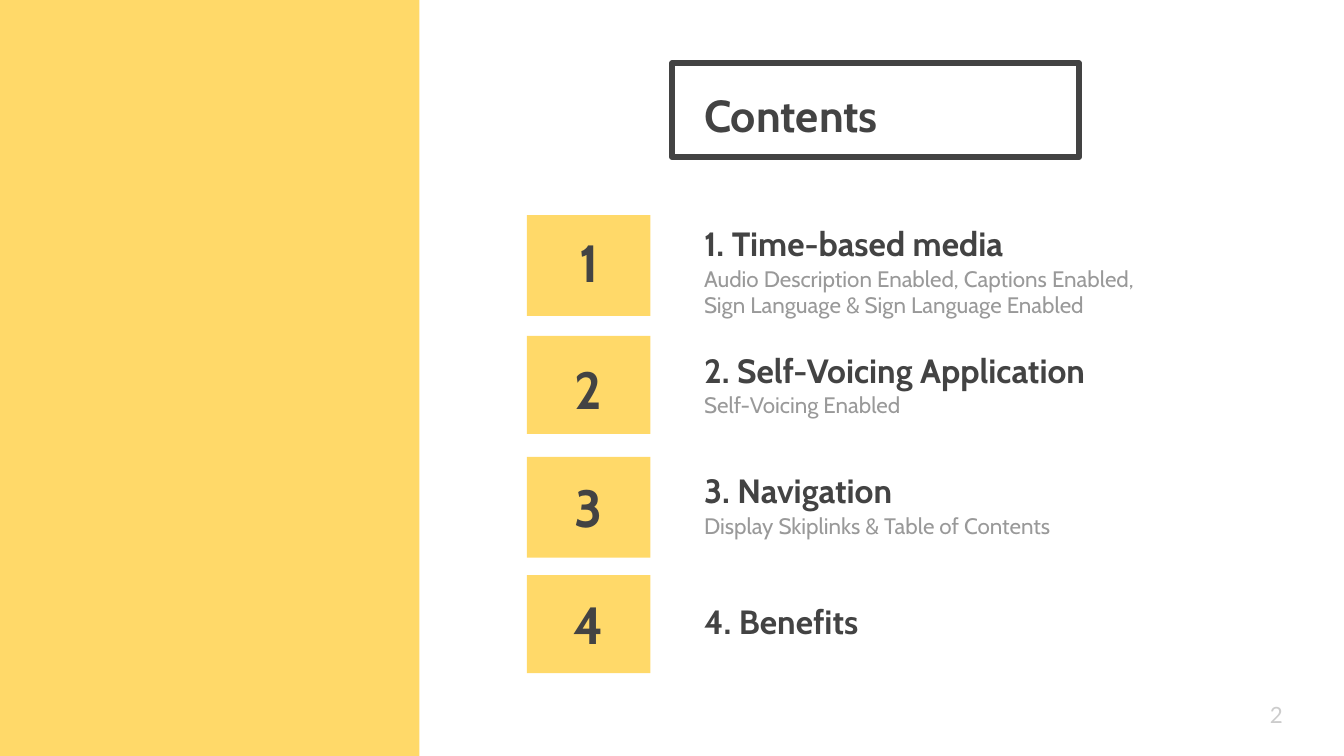
from pptx import Presentation
from pptx.dml.color import RGBColor
from pptx.enum.shapes import MSO_SHAPE
from pptx.enum.text import MSO_ANCHOR, PP_ALIGN
from pptx.util import Inches, Pt

RECT = MSO_SHAPE.RECTANGLE
TOP, MIDDLE, BOTTOM = MSO_ANCHOR.TOP, MSO_ANCHOR.MIDDLE, MSO_ANCHOR.BOTTOM
LEFT, CENTER = PP_ALIGN.LEFT, PP_ALIGN.CENTER

YELLOW = RGBColor(0xFF, 0xD9, 0x69)
DARK = RGBColor(0x43, 0x43, 0x43)
GRAY = RGBColor(0x99, 0x99, 0x99)
LIGHT = RGBColor(0xCC, 0xCC, 0xCC)

SLIDE_W = 10
SLIDE_H = SLIDE_W * 9 / 16
TEXT_X = 5.14
TITLE_W = 5.81

# Tile top, tile height, number top, heading top, heading, description
SECTIONS = [
    (1.6, 0.75, 1.6, 1.31, "1. Time-based media",
     "Audio Description Enabled, Captions Enabled, "
     "Sign Language & Sign Language Enabled"),
    (2.5, 0.73, 2.54, 2.25, "2. Self-Voicing Application",
     "Self-Voicing Enabled"),
    (3.4, 0.75, 3.42, 3.15, "3. Navigation",
     "Display Skiplinks & Table of Contents"),
    (4.28, 0.73, 4.29, 4.12, "4. Benefits", None),
]


def write(tf, text, size=12, color=DARK, bold=False, font="Cabin",
          align=LEFT, spacing=None):
    p = tf.paragraphs[0]
    p.alignment = align
    if spacing:
        p.line_spacing = spacing
    r = p.add_run()
    r.text = text
    r.font.name = font
    r.font.size = Pt(size)
    r.font.bold = bold
    r.font.color.rgb = color


class Deck:
    """Holds the box style and the current slide."""

    inset = Inches(0.1)

    def __init__(self, slide):
        self.slide = slide

    def rect(self, x, y, w, h, fill=None, line=None, width=3):
        sp = self.slide.shapes.add_shape(
            RECT, Inches(x), Inches(y), Inches(w), Inches(h))
        sp.shadow.inherit = False
        if fill is None:
            sp.fill.background()
        else:
            sp.fill.solid()
            sp.fill.fore_color.rgb = fill
        if line is None:
            sp.line.fill.background()
        else:
            sp.line.color.rgb = line
            sp.line.width = Pt(width)

    def text(self, x, y, w, h, text, anchor=MIDDLE, **style):
        sp = self.slide.shapes.add_textbox(
            Inches(x), Inches(y), Inches(w), Inches(h))
        tf = sp.text_frame
        tf.word_wrap = True
        tf.vertical_anchor = anchor
        tf.margin_left = tf.margin_right = self.inset
        tf.margin_top = tf.margin_bottom = self.inset
        write(tf, text, **style)


def main():
    prs = Presentation()
    prs.slide_width, prs.slide_height = Inches(SLIDE_W), Inches(SLIDE_H)
    s = prs.slides.add_slide(prs.slide_layouts[6])
    deck = Deck(s)

    # Side panel and framed title
    deck.rect(5, 0.47, 3.03, 0.7, line=DARK)
    deck.rect(0, 0, 3.12, SLIDE_H, fill=YELLOW)
    deck.text(TEXT_X, 0.21, TITLE_W, 1.22, "Contents",
              size=24, bold=True, spacing=1.15)

    # Numbered sections
    for number, section in enumerate(SECTIONS, 1):
        tile_y, tile_h, number_y, heading_y, heading, description = section
        deck.rect(3.92, tile_y, 0.92, tile_h, fill=YELLOW)
        deck.text(3.69, number_y, 1.38, 0.7, str(number),
                  size=28, bold=True, align=CENTER)
        deck.text(TEXT_X, heading_y, TITLE_W, 0.75, heading,
                  anchor=BOTTOM, size=18, bold=True)
        if description:
            deck.text(TEXT_X, heading_y + 0.56, 3.68, 0.63, description,
                      anchor=TOP, color=GRAY)

    # Page number
    deck.text(9.35, 5.1, 0.6, 0.43, "2", color=LIGHT, font="Lato")

    prs.save("out.pptx")


if __name__ == "__main__":
    main()
